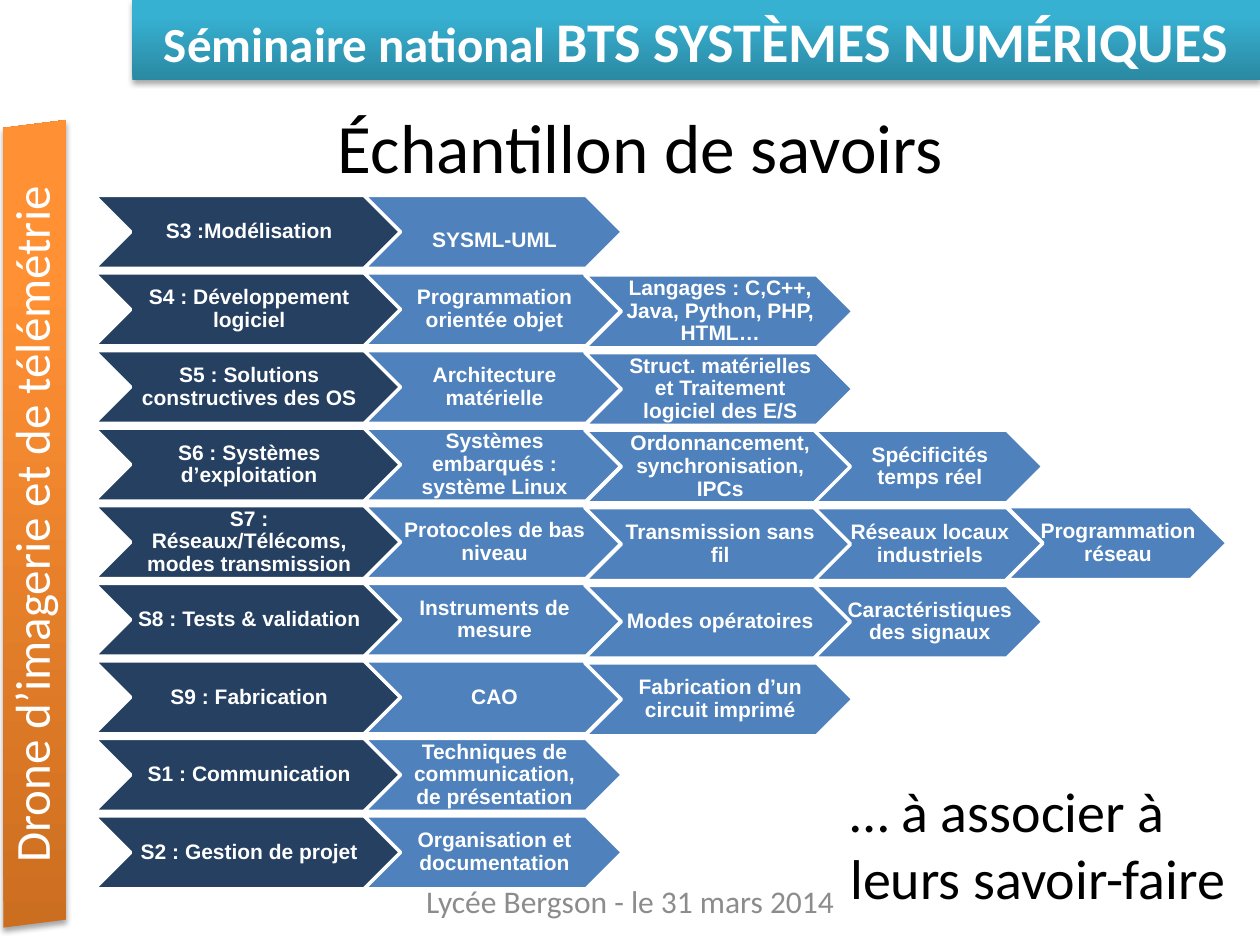
from lxml import etree
from pptx import Presentation
from pptx.dml.color import RGBColor
from pptx.enum.shapes import MSO_SHAPE
from pptx.enum.text import MSO_ANCHOR, PP_ALIGN
from pptx.oxml.ns import qn
from pptx.util import Cm, Pt

WHITE = RGBColor(0xFF, 0xFF, 0xFF)
BLACK = RGBColor(0, 0, 0)
GREY = RGBColor(0x8C, 0x8C, 0x8C)
NAVY = RGBColor(0x25, 0x40, 0x61)
BLUE = RGBColor(0x4F, 0x81, 0xBD)
TEAL = (RGBColor(0x2A, 0x88, 0xA2), RGBColor(0x37, 0xB1, 0xD2))
ORANGE = (RGBColor(0xCC, 0x6E, 0x20), RGBColor(0xFF, 0x90, 0x34))

HEADER = [("Séminaire national ", 28), ("BTS SYSTÈMES NUMÉRIQUES", 32)]
SIDE_TITLE = "Drone d’imagerie et de télémétrie"
TITLE = "Échantillon de savoirs"
FOOTER = "Lycée Bergson - le 31 mars 2014"
REMARK = "… à associer à leurs savoir-faire"

ROWS = [
    ["S3 :Modélisation", "SYSML-UML"],
    ["S4 : Développement logiciel", "Programmation orientée objet",
     "Langages : C,C++, Java, Python, PHP, HTML…"],
    ["S5 : Solutions constructives des OS", "Architecture matérielle",
     "Struct. matérielles et Traitement logiciel des E/S"],
    ["S6 : Systèmes d’exploitation", "Systèmes embarqués : système Linux",
     "Ordonnancement, synchronisation, IPCs", "Spécificités temps réel"],
    ["S7 : Réseaux/Télécoms, modes transmission", "Protocoles de bas niveau",
     "Transmission sans fil", "Réseaux locaux industriels", "Programmation réseau"],
    ["S8 : Tests & validation", "Instruments de mesure", "Modes opératoires",
     "Caractéristiques des signaux"],
    ["S9 : Fabrication", "CAO", "Fabrication d’un circuit imprimé"],
    ["S1 : Communication", "Techniques de communication, de présentation"],
    ["S2 : Gestion de projet", "Organisation et documentation"],
]
# left, width, drop below the row top (cm), colour
COLUMNS = [
    (1.9, 6.2, 0, NAVY),
    (7.34, 5.21, 0, BLUE),
    (11.79, 5.41, 0.04, BLUE),
    (16.41, 4.62, 0.04, BLUE),
    (20.29, 4.45, 0.02, BLUE),
]
TEXT_DROP = {"SYSML-UML": 0.18}
FIRST_TOP, LAST_TOP, CHEVRON_H = 3.94, 16.45, 1.47
ROW_STEP = (LAST_TOP - FIRST_TOP) / (len(ROWS) - 1)
TEXT_SHARE = 0.74  # part of a chevron's width given to its text


def add_text(s, box, runs, color, font="Calibri", bold=False,
             align=PP_ALIGN.CENTER, anchor=MSO_ANCHOR.MIDDLE):
    tb = s.shapes.add_textbox(*map(Cm, box))
    write(tb.text_frame, runs, color, font, bold, align, anchor)
    return tb


def write(tf, runs, color, font="Calibri", bold=False,
          align=PP_ALIGN.CENTER, anchor=MSO_ANCHOR.MIDDLE):
    tf.word_wrap = True
    tf.vertical_anchor = anchor
    p = tf.paragraphs[0]
    p.alignment = align
    for text, size in runs:
        r = p.add_run()
        r.text = text
        r.font.name, r.font.size, r.font.bold = font, Pt(size), bold
        r.font.color.rgb = color


def style_band(sp, colors):
    """Upward gradient and a soft shadow below."""
    sp.fill.gradient()
    sp.fill.gradient_angle = 90
    for stop, color, position in zip(sp.fill.gradient_stops, colors, (0, 0.8)):
        stop.color.rgb, stop.position = color, position
    sp.line.fill.background()
    sp.shadow.inherit = False
    effects = sp._element.spPr.find(qn("a:effectLst"))
    shadow = etree.SubElement(effects, qn("a:outerShdw"), blurRad="40000",
                              dist="23000", dir="5400000", rotWithShape="0")
    color = etree.SubElement(shadow, qn("a:srgbClr"), val="000000")
    etree.SubElement(color, qn("a:alpha"), val="35000")


def add_chevron(s, text, left, top, width, color):
    sp = s.shapes.add_shape(MSO_SHAPE.CHEVRON, Cm(left), Cm(top), Cm(width), Cm(CHEVRON_H))
    sp.shadow.inherit = False
    sp.fill.solid()
    sp.fill.fore_color.rgb = color
    sp.line.color.rgb = WHITE
    sp.line.width = Pt(2)
    box = (left + width * (1 - TEXT_SHARE) / 2, top + TEXT_DROP.get(text, 0),
           width * TEXT_SHARE, CHEVRON_H)
    tf = add_text(s, box, [(text, 12)], WHITE, "Arial", True).text_frame
    tf.margin_left, tf.margin_right = Cm(0.05), 0
    tf.margin_top = tf.margin_bottom = Cm(0.03)
    tf.paragraphs[0].line_spacing = 0.9


def main():
    prs = Presentation()
    prs.slide_width, prs.slide_height = Cm(25.4), Cm(19.05)
    s = prs.slides.add_slide(prs.slide_layouts[6])

    header = s.shapes.add_shape(MSO_SHAPE.RECTANGLE, Cm(2.67), 0, Cm(22.73), Cm(1.62))
    style_band(header, TEAL)
    write(header.text_frame, HEADER, WHITE, bold=True)

    outline = [(0.07, 2.58), (1.33, 2.42), (1.33, 18.54), (0.07, 18.7)]
    corners = [(Cm(x), Cm(y)) for x, y in outline]
    side = s.shapes.build_freeform(*corners[0])
    side.add_line_segments(corners[1:])
    style_band(side.convert_to_shape(), ORANGE)
    add_text(s, (-7.29, 10.03, 15.8, 1.09), [(SIDE_TITLE, 28)], WHITE).rotation = 270

    add_text(s, (1.7, 1.93, 22.43, 2.01), [(TITLE, 39.6)], BLACK)
    add_text(s, (8.31, 17.65, 8.79, 1.02), [(FOOTER, 18)], GREY)

    for col, (left, width, drop, color) in enumerate(COLUMNS):
        for i, row in enumerate(ROWS):
            if col < len(row):
                add_chevron(s, row[col], left, FIRST_TOP + i * ROW_STEP + drop, width, color)

    add_text(s, (16.89, 15.52, 8.51, 3), [(REMARK, 32)], BLACK,
             align=PP_ALIGN.LEFT, anchor=MSO_ANCHOR.TOP)
    prs.save("out.pptx")


if __name__ == "__main__":
    main()
